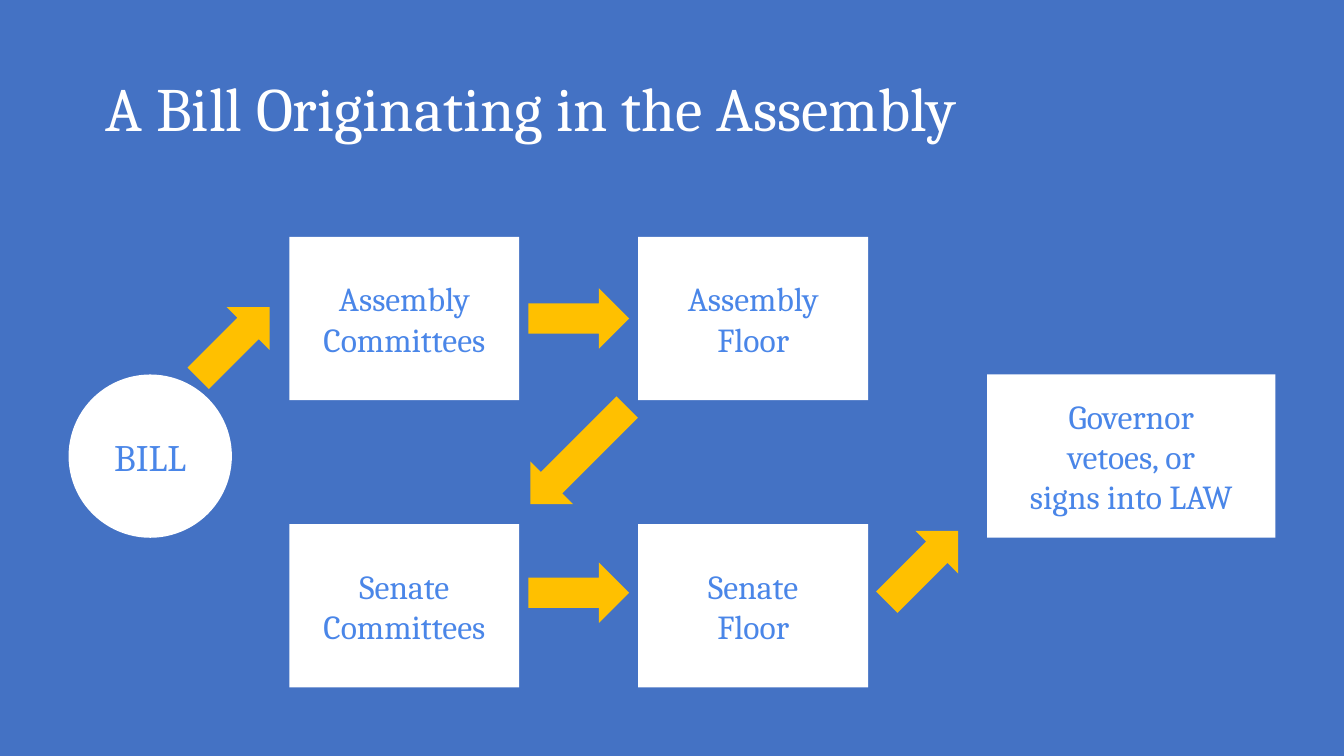
from dataclasses import dataclass

from pptx import Presentation
from pptx.dml.color import RGBColor
from pptx.enum.shapes import MSO_SHAPE
from pptx.enum.text import MSO_ANCHOR, PP_ALIGN
from pptx.util import Inches, Pt


@dataclass(frozen=True)
class Theme:
    """Colours, font and type sizes of the slide."""
    background: RGBColor = RGBColor(0x44, 0x72, 0xC4)
    panel: RGBColor = RGBColor(0xFF, 0xFF, 0xFF)
    label: RGBColor = RGBColor(0x4A, 0x86, 0xE8)
    arrow: RGBColor = RGBColor(0xFF, 0xC0, 0x00)
    font: str = "Cambria"
    title_size: float = 44
    bill_size: float = 26.7
    stage_size: float = 24


THEME = Theme()
STAGE_HEIGHT = 1.62
STAGE_WIDTH = 2.28
ARROW_LENGTH = 1
ARROW_HEIGHT = 0.6


def write_text(frame, text, *, size, color, align=PP_ALIGN.LEFT,
               anchor=MSO_ANCHOR.TOP, line_spacing=None):
    """Write each line of text as a formatted paragraph."""
    frame.word_wrap = True
    frame.vertical_anchor = anchor
    frame.margin_left = frame.margin_right = Inches(0.13)
    frame.margin_top = frame.margin_bottom = Inches(0.13)
    frame.text = text
    for paragraph in frame.paragraphs:
        paragraph.alignment = align
        paragraph.line_spacing = line_spacing
        paragraph.font.name = THEME.font
        paragraph.font.size = Pt(size)
        paragraph.font.color.rgb = color


def add_filled(slide, kind, box, color):
    """Add a flat preset shape without an outline."""
    shape = slide.shapes.add_shape(kind, *map(Inches, box))
    shape.shadow.inherit = False
    shape.fill.solid()
    shape.fill.fore_color.rgb = color
    shape.line.fill.background()
    return shape


def add_title(slide, box):
    """Place the slide title in its box."""
    title = slide.shapes.add_textbox(*map(Inches, box))
    write_text(title.text_frame, "A Bill Originating in the Assembly",
               size=THEME.title_size, color=THEME.panel, line_spacing=0.9)


def add_stage(slide, box, text, kind=MSO_SHAPE.RECTANGLE, size=THEME.stage_size):
    """Add one white stage with a centred label."""
    stage = add_filled(slide, kind, box, THEME.panel)
    write_text(stage.text_frame, text, size=size, color=THEME.label,
               align=PP_ALIGN.CENTER, anchor=MSO_ANCHOR.MIDDLE)


def add_arrow(slide, left, top, length=ARROW_LENGTH, rotation=0):
    """Add a block arrow turned about its centre."""
    arrow = add_filled(slide, MSO_SHAPE.RIGHT_ARROW,
                       (left, top, length, ARROW_HEIGHT), THEME.arrow)
    arrow.rotation = rotation


def add_chamber(slide, left, top, chamber, arrow_drop):
    """Add a chamber's committees, its floor and the arrow between them."""
    for column, step in enumerate(("Committees", "Floor")):
        box = (left + column * 3.46, top, STAGE_WIDTH, STAGE_HEIGHT)
        add_stage(slide, box, f"{chamber}\n{step}")
    add_arrow(slide, left + STAGE_WIDTH + 0.09, top + arrow_drop)


def add_flow(slide, box):
    """Lay out the bill's route from introduction to the governor."""
    left, top, width, height = box
    chambers_left = left + 2.19
    middle = top + (height - STAGE_HEIGHT) / 2 - 0.06
    governor_width = 2.86
    add_stage(slide, (left, middle, STAGE_HEIGHT, STAGE_HEIGHT), "BILL",
              kind=MSO_SHAPE.OVAL, size=THEME.bill_size)
    add_chamber(slide, chambers_left, top, "Assembly", arrow_drop=0.51)
    add_chamber(slide, chambers_left, top + height - STAGE_HEIGHT, "Senate",
                arrow_drop=0.38)
    add_stage(slide, (left + width - governor_width, middle, governor_width, STAGE_HEIGHT),
              "Governor\nvetoes, or\nsigns into LAW")
    add_arrow(slide, left + 1.14, top + 0.75, rotation=315)
    add_arrow(slide, left + 4.38, top + 1.87, length=1.36, rotation=135)
    add_arrow(slide, left + 7.97, top + 2.97, rotation=315)


def main():
    """Build and save the slide."""
    presentation = Presentation()
    presentation.slide_width = Inches(13.33)
    presentation.slide_height = Inches(7.5)
    slide = presentation.slides.add_slide(presentation.slide_layouts[6])
    slide.background.fill.solid()
    slide.background.fill.fore_color.rgb = THEME.background
    add_title(slide, (0.92, 0.65, 11.62, 0.84))
    add_flow(slide, (0.68, 2.35, 11.97, 4.47))
    presentation.save("out.pptx")


if __name__ == "__main__":
    main()
